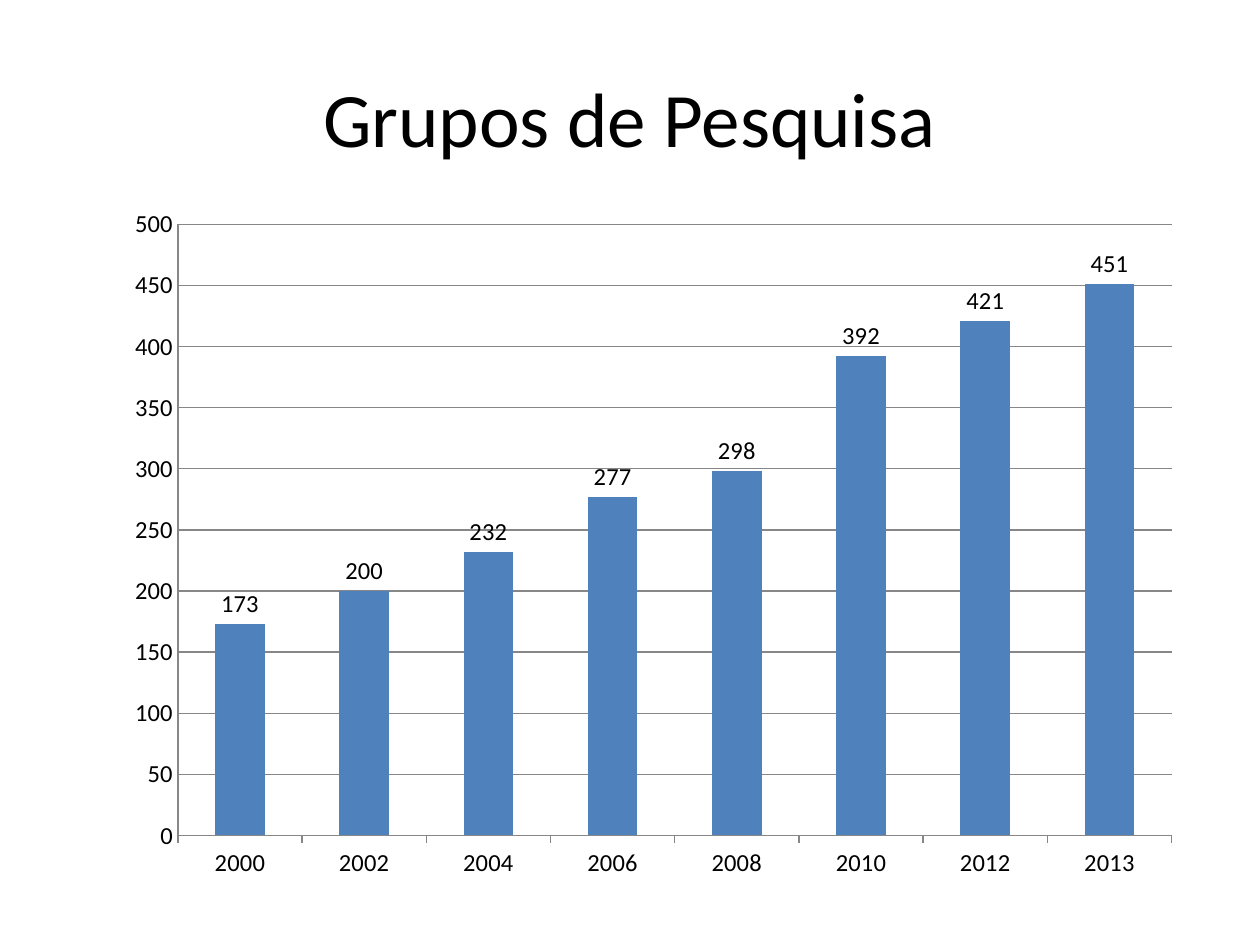
from collections import namedtuple
from pptx import Presentation
from pptx.chart.data import CategoryChartData
from pptx.dml.color import RGBColor
from pptx.enum.chart import XL_CHART_TYPE, XL_LABEL_POSITION, XL_TICK_MARK
from pptx.enum.text import MSO_ANCHOR, PP_ALIGN
from pptx.util import Inches, Pt

Theme = namedtuple("Theme", "font ink bar rule title body")
theme = Theme(
    font="Calibri",
    ink=RGBColor.from_string("000000"),
    bar=RGBColor.from_string("4F81BD"),
    rule=RGBColor.from_string("878787"),
    title=Pt(44),
    body=Pt(14),
)


def style(font, size):
    font.name = theme.font
    font.size = size
    font.color.rgb = theme.ink


deck = Presentation()
deck.slide_width = Inches(10)
deck.slide_height = Inches(7.5)
slide = deck.slides.add_slide(deck.slide_layouts[6])

title = slide.shapes.add_textbox(Inches(0.5), Inches(0.3), Inches(9), Inches(1.25))
frame = title.text_frame
frame.word_wrap = True
frame.vertical_anchor = MSO_ANCHOR.MIDDLE
frame.text = "Grupos de Pesquisa"
head = frame.paragraphs[0]
head.alignment = PP_ALIGN.CENTER
style(head.runs[0].font, theme.title)

groups = {
    "2000": 173,
    "2002": 200,
    "2004": 232,
    "2006": 277,
    "2008": 298,
    "2010": 392,
    "2012": 421,
    "2013": 451,
}
data = CategoryChartData()
data.categories = list(groups)
data.add_series("Series 1", list(groups.values()))

chart = slide.shapes.add_chart(
    XL_CHART_TYPE.COLUMN_CLUSTERED,
    Inches(0.9), Inches(1.55), Inches(8.57), Inches(5.53), data,
).chart
chart.has_legend = False
chart.has_title = False
style(chart.font, theme.body)

years = chart.category_axis
years.major_tick_mark = XL_TICK_MARK.OUTSIDE
years.has_major_gridlines = False

count = chart.value_axis
count.minimum_scale = 0
count.maximum_scale = 500
count.major_unit = 50
count.major_tick_mark = XL_TICK_MARK.NONE
count.has_major_gridlines = True

for part in (years, count, count.major_gridlines):
    part.format.line.color.rgb = theme.rule
    part.format.line.width = Pt(0.75)

plot = chart.plots[0]
plot.gap_width = 150
plot.vary_by_categories = False

series = plot.series[0]
series.format.fill.solid()
series.format.fill.fore_color.rgb = theme.bar
labels = series.data_labels
labels.show_value = True
labels.position = XL_LABEL_POSITION.OUTSIDE_END
style(labels.font, theme.body)

deck.save("out.pptx")
